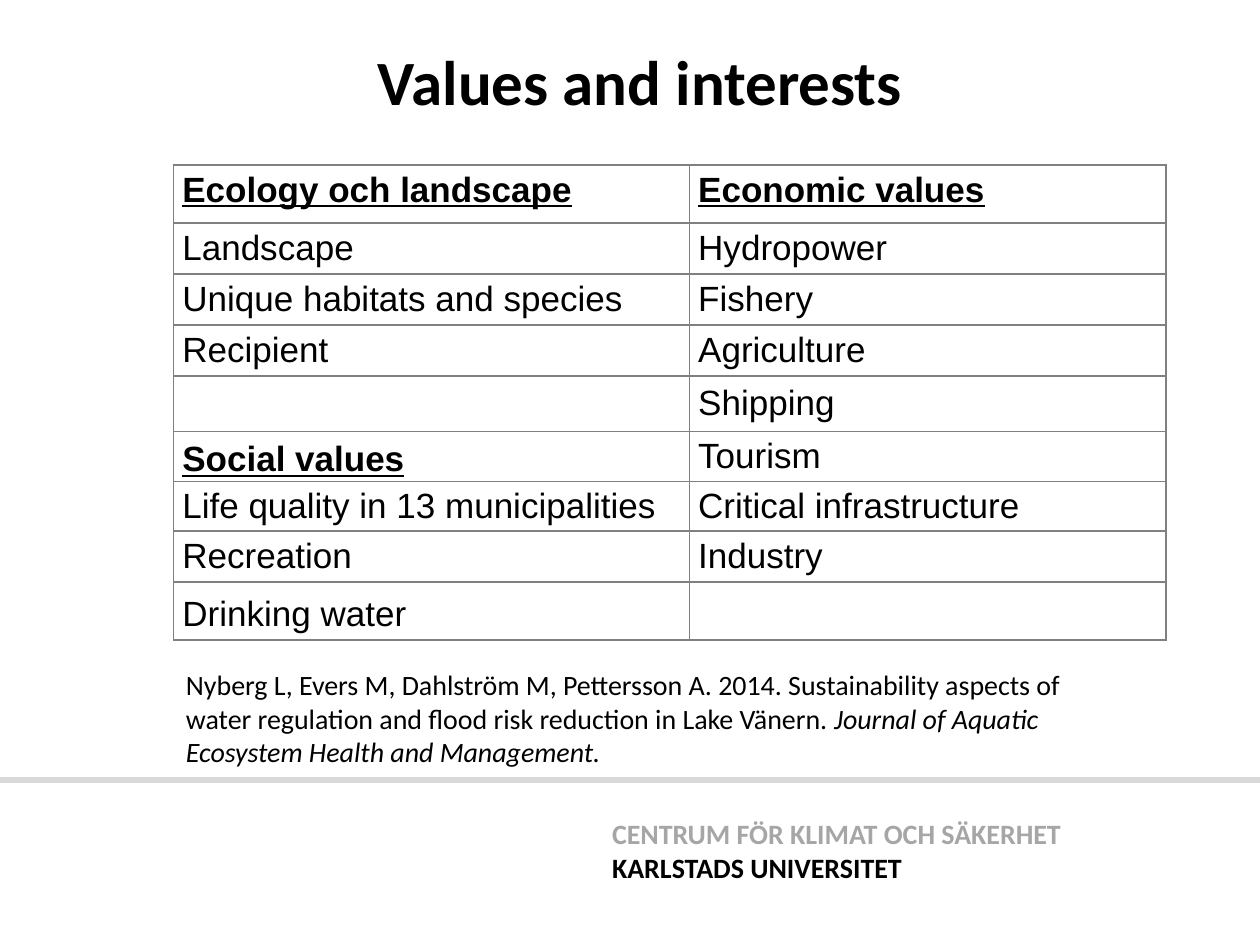
from pptx import Presentation
from pptx.dml.color import RGBColor
from pptx.enum.shapes import MSO_CONNECTOR as Conn
from pptx.enum.text import MSO_ANCHOR as Anchor, PP_ALIGN as Align
from pptx.oxml.ns import qn
from pptx.util import Pt
from lxml.etree import SubElement

BLACK, GREY, RULE, EDGE = "000000", "A6A6A6", "D9D9D9", "808080"
HEADS = {"Ecology och landscape", "Economic values", "Social values"}
LOOSE = HEADS | {"Drinking water"}
ROWS = [
    ("Ecology och landscape", "Economic values"),
    ("Landscape", "Hydropower"),
    ("Unique habitats and species", "Fishery"),
    ("Recipient", "Agriculture"),
    ("", "Shipping"),
    ("Social values", "Tourism"),
    ("Life quality in 13 municipalities", "Critical infrastructure"),
    ("Recreation", "Industry"),
    ("Drinking water", ""),
]
TALL = [33.3, 29.1, 29.1, 29.1, 32, 28.6, 28.2, 29.1, 33.3]
WIDE = [294.8, 272.2]


def tint(code):
    return RGBColor.from_string(code)


def add_run(para, text, size, color=BLACK, face="Calibri",
            bold=False, italic=False, under=False):
    run = para.add_run()
    run.text = text
    font = run.font
    font.name, font.size = face, Pt(size)
    font.bold, font.italic, font.underline = bold, italic, under
    font.color.rgb = tint(color)


def add_box(slide, box):
    frame = slide.shapes.add_textbox(*map(Pt, box)).text_frame
    frame.word_wrap = True
    return frame


def add_title(slide, box):
    para = add_box(slide, box).paragraphs[0]
    para.alignment = Align.CENTER
    add_run(para, "Values and interests", 36, bold=True)


def add_edges(cell):
    props = cell._tc.get_or_add_tcPr()
    for side in ("lnL", "lnR", "lnT", "lnB"):
        line = SubElement(props, qn("a:" + side), w=str(Pt(1)))
        fill = SubElement(line, qn("a:solidFill"))
        SubElement(fill, qn("a:srgbClr"), val=EDGE)


def fill_cell(cell, text, anchor):
    add_edges(cell)
    cell.fill.background()
    cell.margin_left = cell.margin_right = Pt(5)
    cell.margin_top = cell.margin_bottom = 0
    cell.vertical_anchor = anchor
    if not text:
        return
    para = cell.text_frame.paragraphs[0]
    if text in LOOSE:
        para.line_spacing = 1.15
    head = text in HEADS
    add_run(para, text, 20, face="Arial", bold=head, under=head)


def add_values(slide, left, top):
    box = (left, top, sum(WIDE), sum(TALL))
    table = slide.shapes.add_table(len(ROWS), len(WIDE), *map(Pt, box)).table
    table.first_row = table.horz_banding = False
    for col, width in zip(table.columns, WIDE):
        col.width = Pt(width)
    for i, (row, height, texts) in enumerate(zip(table.rows, TALL, ROWS)):
        row.height = Pt(height)
        for cell, text in zip(row.cells, texts):
            fill_cell(cell, text, Anchor.MIDDLE if i else Anchor.TOP)


def add_source(slide, box):
    para = add_box(slide, box).paragraphs[0]
    add_run(para, "Nyberg L, Evers M, Dahlström M, Pettersson A. 2014. "
            "Sustainability aspects of water regulation and flood risk "
            "reduction in Lake Vänern. ", 16)
    add_run(para, "Journal of Aquatic Ecosystem Health and Management.", 16,
            italic=True)


def add_footer(slide, top, width):
    """Draw the rule across the slide and the sender's name below it."""
    rule = slide.shapes.add_connector(
        Conn.STRAIGHT, 0, Pt(top), Pt(width), Pt(top))
    rule.line.color.rgb = tint(RULE)
    rule.line.width = Pt(3)
    SubElement(rule._element.spPr, qn("a:effectLst"))
    frame = add_box(slide, (342.7, top + 17.3, 283.7, 46))
    add_run(frame.paragraphs[0], "CENTRUM FÖR KLIMAT OCH SÄKERHET", 16,
            GREY, bold=True)
    add_run(frame.add_paragraph(), "KARLSTADS UNIVERSITET", 16, bold=True)


def main():
    deck = Presentation()
    deck.slide_width, deck.slide_height = Pt(720), Pt(540)
    slide = deck.slides.add_slide(deck.slide_layouts[6])
    add_footer(slide, 445.7, 720)
    add_title(slide, (54, 20.9, 623.5, 51))
    add_values(slide, 99.2, 94.2)
    add_source(slide, (99.2, 378, 532.8, 65.5))
    deck.save("out.pptx")


if __name__ == "__main__":
    main()
